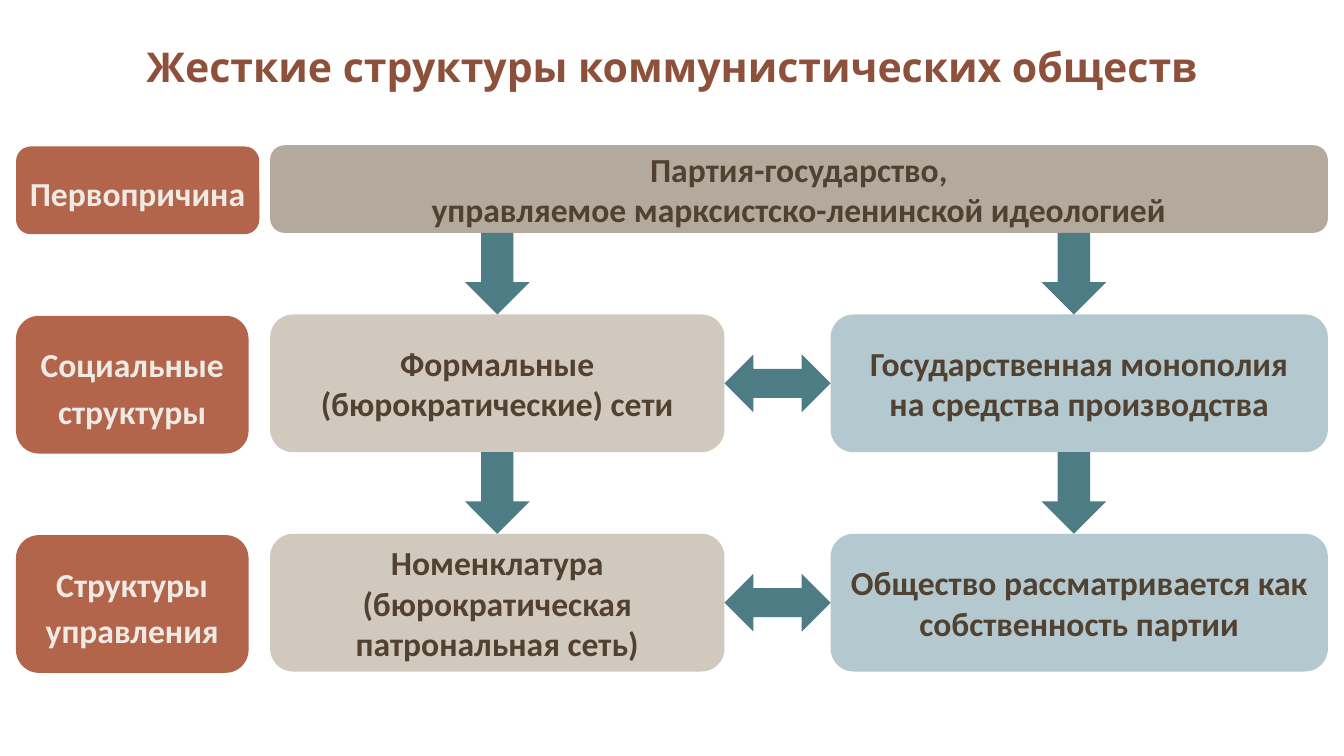
from lxml.etree import SubElement
from pptx import Presentation
from pptx.dml.color import RGBColor
from pptx.enum.shapes import MSO_SHAPE
from pptx.enum.text import MSO_ANCHOR, PP_ALIGN
from pptx.oxml.ns import qn
from pptx.util import Pt

TITLE_BROWN = RGBColor(0x8D, 0x50, 0x3B)
TEXT_BROWN = RGBColor(0x50, 0x41, 0x31)
CREAM = RGBColor(0xEF, 0xEA, 0xE4)
BRICK = RGBColor(0xB2, 0x65, 0x4B)
TAUPE = RGBColor(0xB3, 0xAA, 0x9D)
SAND = RGBColor(0xD1, 0xC9, 0xBE)
BLUE = RGBColor(0x6B, 0x95, 0xA1)
TEAL = RGBColor(0x4D, 0x7C, 0x85)

TITLE = "Жесткие структуры коммунистических обществ"
ROOT_LABEL = "Первопричина"
ROOT_LINES = ["Партия-государство,", "управляемое марксистско-ленинской идеологией"]
# row label, network box, property box
ROWS = [
    ("Социальные структуры", "Формальные (бюрократические) сети",
     "Государственная монополия на средства производства"),
    ("Структуры управления", "Номенклатура (бюрократическая патрональная сеть)",
     "Общество рассматривается как собственность партии"),
]

LABEL_LEFT, LABEL_WIDTH, ROOT_LABEL_WIDTH = 8.6, 124.6, 130.3
NETWORK_LEFT, NETWORK_WIDTH = 144.7, 243.4
PROPERTY_LEFT, PROPERTY_WIDTH = 445, 266.4
RIGHT = PROPERTY_LEFT + PROPERTY_WIDTH
ROOT_TOP, ROOT_HEIGHT = 77.8, 47
ROW_HEIGHT, ROW_GAP = 73.8, 43.7
ROWS_TOP = ROOT_TOP + ROOT_HEIGHT + ROW_GAP
LABEL_DROP = 0.7
DOWN_WIDTH, DOWN_CENTERS = 34.6, (266.4, 575.3)
SIDE_HEIGHT = 31


def write(box, lines, size=18, font="Calibri", color=TEXT_BROWN, spacing=None, insets=(7.2, 3.6)):
    frame = box.text_frame
    frame.word_wrap = True
    frame.vertical_anchor = MSO_ANCHOR.MIDDLE
    frame.margin_left = frame.margin_right = Pt(insets[0])
    frame.margin_top = frame.margin_bottom = Pt(insets[1])
    for index, line in enumerate(lines):
        para = frame.add_paragraph() if index else frame.paragraphs[0]
        para.alignment = PP_ALIGN.CENTER
        para.line_spacing = spacing
        span = para.add_run()
        span.text = line
        span.font.size, span.font.name, span.font.bold = Pt(size), font, True
        span.font.color.rgb = color


def add_shape(page, kind, left, top, width, height, fill, alpha=None):
    shape = page.shapes.add_shape(kind, Pt(left), Pt(top), Pt(width), Pt(height))
    shape.shadow.inherit = False
    shape.fill.solid()
    shape.fill.fore_color.rgb = fill
    shape.line.fill.background()
    if alpha:
        color = shape.element.spPr.find(qn("a:solidFill")).find(qn("a:srgbClr"))
        SubElement(color, qn("a:alpha")).set("val", str(alpha * 1000))
    return shape


def add_box(page, lines, left, top, width, height, fill, alpha=None, **text_format):
    box = add_shape(page, MSO_SHAPE.ROUNDED_RECTANGLE, left, top, width, height, fill, alpha)
    write(box, lines, **text_format)


def add_label(page, text, top, width, height):
    add_box(page, [text], LABEL_LEFT, top + LABEL_DROP, width, height, BRICK,
            color=CREAM, spacing=1.15, insets=(4.3, 0.7))


deck = Presentation()
deck.slide_width, deck.slide_height = Pt(720), Pt(405)
page = deck.slides.add_slide(deck.slide_layouts[6])

title = page.shapes.add_textbox(Pt(8.6), Pt(0), Pt(702.8), Pt(71.3))
write(title, [TITLE], size=22, font="Open Sans", color=TITLE_BROWN)

add_label(page, ROOT_LABEL, ROOT_TOP, ROOT_LABEL_WIDTH, ROOT_HEIGHT)
add_box(page, ROOT_LINES, NETWORK_LEFT, ROOT_TOP, RIGHT - NETWORK_LEFT, ROOT_HEIGHT, TAUPE)

for row, (label, network, ownership) in enumerate(ROWS):
    top = ROWS_TOP + row * (ROW_HEIGHT + ROW_GAP)
    add_label(page, label, top, LABEL_WIDTH, ROW_HEIGHT)
    add_box(page, [network], NETWORK_LEFT, top, NETWORK_WIDTH, ROW_HEIGHT, SAND)
    add_box(page, [ownership], PROPERTY_LEFT, top, PROPERTY_WIDTH, ROW_HEIGHT, BLUE, alpha=50)

    network_right = NETWORK_LEFT + NETWORK_WIDTH
    add_shape(page, MSO_SHAPE.LEFT_RIGHT_ARROW, network_right, top + (ROW_HEIGHT - SIDE_HEIGHT) / 2,
              PROPERTY_LEFT - network_right, SIDE_HEIGHT, TEAL)
    for center in DOWN_CENTERS:
        add_shape(page, MSO_SHAPE.DOWN_ARROW, center - DOWN_WIDTH / 2, top - ROW_GAP,
                  DOWN_WIDTH, ROW_GAP, TEAL)

deck.save("out.pptx")
